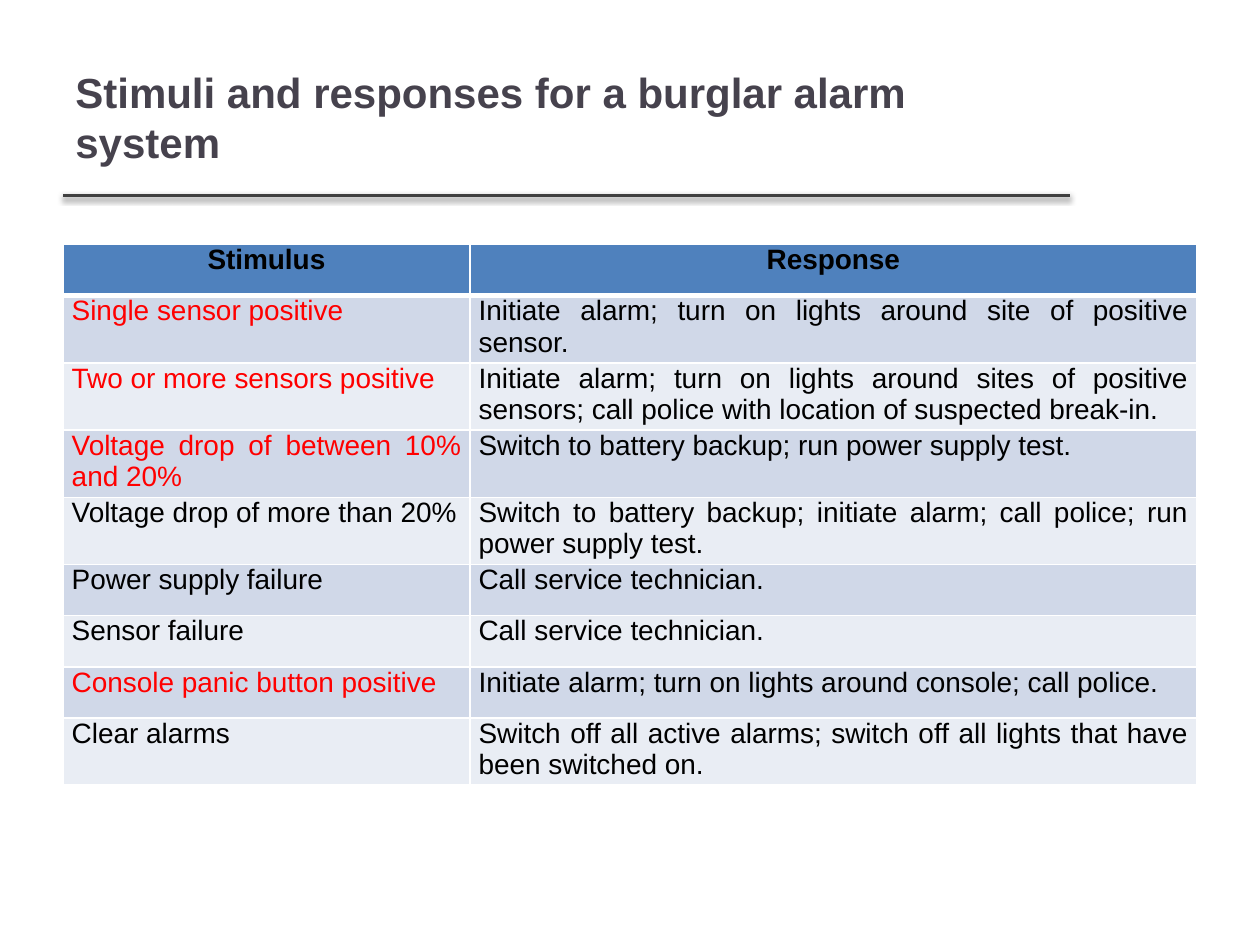
from lxml import etree
from pptx import Presentation
from pptx.dml.color import RGBColor
from pptx.enum.shapes import MSO_CONNECTOR
from pptx.enum.text import MSO_ANCHOR, PP_ALIGN
from pptx.oxml import parse_xml
from pptx.oxml.ns import nsdecls, qn
from pptx.util import Pt

STRAIGHT = MSO_CONNECTOR.STRAIGHT
MIDDLE = MSO_ANCHOR.MIDDLE
LEFT, CENTER, JUSTIFY = PP_ALIGN.LEFT, PP_ALIGN.CENTER, PP_ALIGN.JUSTIFY

FONT = "Arial"
COLORS = {
    "title": "46424D",
    "rule": "404040",
    "shadow": "000000",
    "text": "000000",
    "stimulus": "FF0000",
    "header": "4F81BD",
    "odd_row": "D0D8E8",
    "even_row": "E9EDF4",
    "border": "FFFFFF",
}

MARGIN = 36
COLUMN_WIDTHS = [232.5, 415.5]
ROW_HEIGHT, LAST_ROW_HEIGHT = 29.2, 26

HEADINGS = ("Stimulus", "Response")
# Stimulus, response, whether the stimulus is highlighted
ROWS = [
    ("Single sensor positive",
     "Initiate alarm; turn on lights around site of positive sensor.", True),
    ("Two or more sensors positive",
     "Initiate alarm; turn on lights around sites of positive sensors; "
     "call police with location of suspected break-in.", True),
    ("Voltage drop of between 10% and 20%",
     "Switch to battery backup; run power supply test.", True),
    ("Voltage drop of more than 20%",
     "Switch to battery backup; initiate alarm; call police; "
     "run power supply test.", False),
    ("Power supply failure", "Call service technician.", False),
    ("Sensor failure", "Call service technician.", False),
    ("Console panic button positive",
     "Initiate alarm; turn on lights around console; call police.", True),
    ("Clear alarms",
     "Switch off all active alarms; switch off all lights that have "
     "been switched on.", False),
]


def rgb(name):
    return RGBColor.from_string(COLORS[name])


def write(frame, text, size, color, bold=False, align=LEFT):
    """Put one formatted run in the first paragraph and return the paragraph."""
    para = frame.paragraphs[0]
    para.alignment = align
    span = para.add_run()
    span.text = text
    span.font.name = FONT
    span.font.size = Pt(size)
    span.font.bold = bold
    span.font.color.rgb = rgb(color)
    return para


def add_title(page, text):
    box = page.shapes.add_textbox(Pt(MARGIN), Pt(21.6), Pt(574.5), Pt(90))
    frame = box.text_frame
    frame.word_wrap = True
    frame.vertical_anchor = MIDDLE
    write(frame, text, 24, "title", bold=True)


def add_rule(page):
    rule = page.shapes.add_connector(
        STRAIGHT, Pt(MARGIN), Pt(111.6), Pt(611.3), Pt(111.6))
    rule.line.width = Pt(2)
    rule.line.color.rgb = rgb("rule")
    rule._element.spPr.append(parse_xml(
        f'<a:effectLst {nsdecls("a")}>'
        f'<a:outerShdw blurRad="{Pt(3.1)}" dist="{Pt(1.6)}" dir="5400000" '
        f'rotWithShape="0"><a:srgbClr val="{COLORS["shadow"]}">'
        '<a:alpha val="38000"/></a:srgbClr></a:outerShdw></a:effectLst>'))


def set_borders(cell, top, bottom):
    properties = cell._tc.get_or_add_tcPr()
    widths = {"a:lnL": 1, "a:lnR": 1, "a:lnT": top, "a:lnB": bottom}
    for position, (tag, width) in enumerate(widths.items()):
        line = etree.Element(qn(tag), w=str(Pt(width)))
        fill = etree.SubElement(line, qn("a:solidFill"))
        etree.SubElement(fill, qn("a:srgbClr"), val=COLORS["border"])
        properties.insert(position, line)


def fill_cell(cell, text, fill, color="text", header=False, top=1):
    cell.margin_left = cell.margin_right = Pt(5)
    cell.margin_top = cell.margin_bottom = Pt(0)
    cell.fill.solid()
    cell.fill.fore_color.rgb = rgb(fill)
    para = write(cell.text_frame, text, 16, color, header,
                 CENTER if header else JUSTIFY)
    para.space_after = Pt(3)
    set_borders(cell, top, 3 if header else 1)


def add_stimulus_table(page):
    count = len(ROWS) + 1
    heights = [ROW_HEIGHT] * (count - 1) + [LAST_ROW_HEIGHT]
    table = page.shapes.add_table(
        count, len(HEADINGS), Pt(MARGIN), Pt(139.8),
        Pt(sum(COLUMN_WIDTHS)), Pt(sum(heights))).table
    for column, width in zip(table.columns, COLUMN_WIDTHS):
        column.width = Pt(width)
    for row, height in zip(table.rows, heights):
        row.height = Pt(height)

    # Header row
    for index, heading in enumerate(HEADINGS):
        fill_cell(table.cell(0, index), heading, "header", header=True)

    # Banded body rows
    for index, (stimulus, response, highlighted) in enumerate(ROWS, start=1):
        fill = "odd_row" if index % 2 else "even_row"
        color = "stimulus" if highlighted else "text"
        top = 3 if index == 1 else 1
        fill_cell(table.cell(index, 0), stimulus, fill, color, top=top)
        fill_cell(table.cell(index, 1), response, fill, top=top)


def main():
    deck = Presentation()
    deck.slide_width, deck.slide_height = Pt(720), Pt(540)
    page = deck.slides.add_slide(deck.slide_layouts[6])
    add_rule(page)
    add_title(page, "Stimuli and responses for a burglar alarm system")
    add_stimulus_table(page)
    deck.save("out.pptx")


if __name__ == "__main__":
    main()
